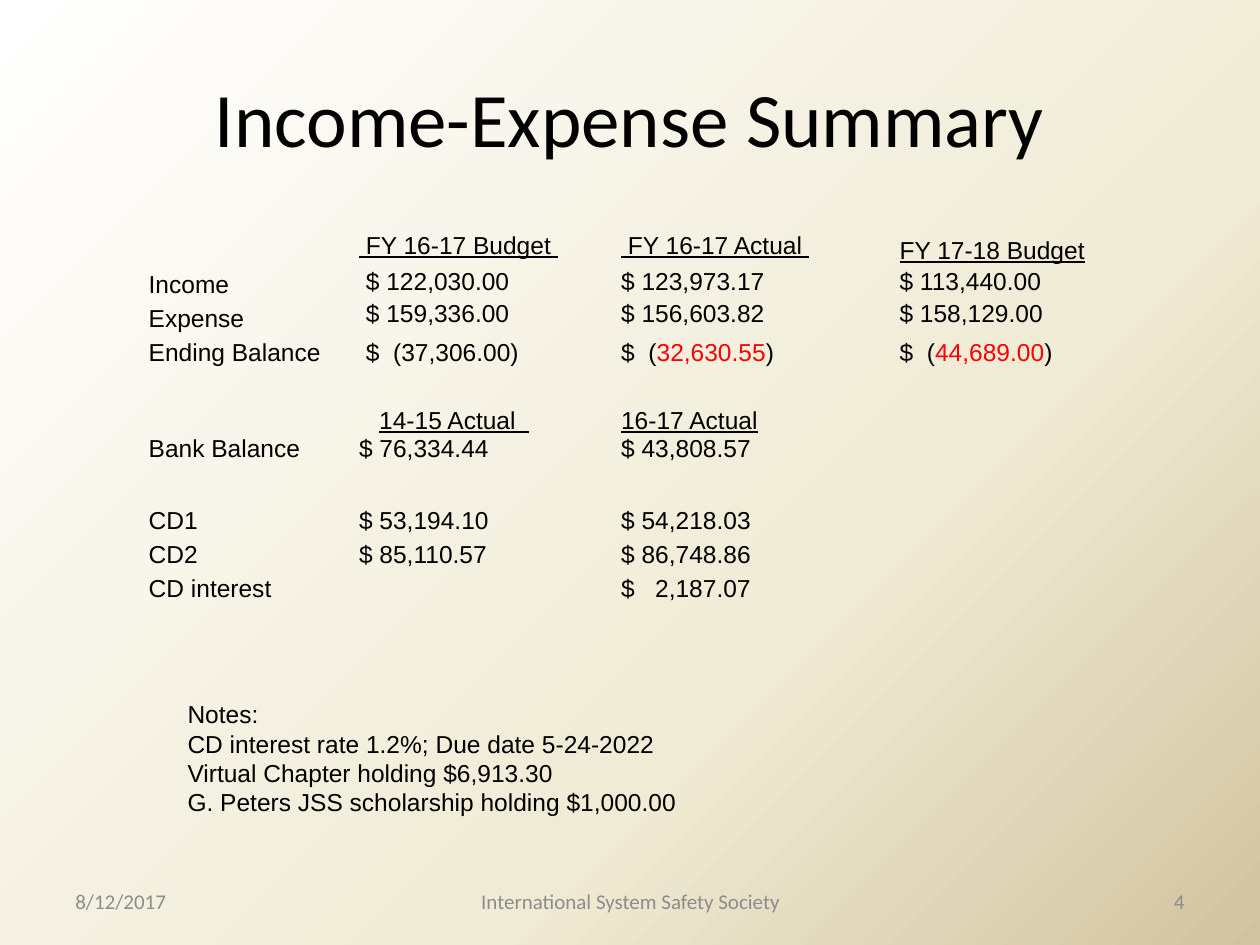
from lxml import etree
from pptx import Presentation
from pptx.dml.color import RGBColor
from pptx.enum.text import MSO_ANCHOR, PP_ALIGN
from pptx.oxml.ns import qn
from pptx.util import Inches, Pt

LEFT, CENTER, RIGHT = PP_ALIGN.LEFT, PP_ALIGN.CENTER, PP_ALIGN.RIGHT
TOP, MIDDLE, BOTTOM = MSO_ANCHOR.TOP, MSO_ANCHOR.MIDDLE, MSO_ANCHOR.BOTTOM
NO_STYLE_NO_GRID = "{2D5ABB26-0587-4C30-8999-92F81FD0307C}"
BLACK, RED, GREY = "000000", "FF0000", "8C8C8C"


def rgb(value):
    return RGBColor.from_string(value)


class Deck:
    heading_font, body_font, body_size = "Calibri", "Arial", 14

    def __init__(self, prs):
        self.s = prs.slides.add_slide(prs.slide_layouts[6])

    def background(self, stops, angle):
        fill = self.s.background.fill
        fill.gradient()
        # OOXML angles run clockwise, python-pptx angles counter-clockwise
        fill.gradient_angle = 360 - angle
        gs_list = self.s.background._cSld.find(".//" + qn("a:gsLst"))
        for gs in list(gs_list):
            gs_list.remove(gs)
        for pos, color in stops:
            gs = etree.SubElement(gs_list, qn("a:gs"), pos=str(pos * 1000))
            etree.SubElement(gs, qn("a:srgbClr"), val=color)

    def run(self, p, text, font, size, color=BLACK, underline=False):
        r = p.add_run()
        r.text = text
        r.font.name, r.font.size = font, Pt(size)
        r.font.color.rgb = rgb(color)
        r.font.underline = underline

    def text(self, box, lines, font, size, color=BLACK, align=LEFT,
             anchor=MIDDLE, wrap=True):
        sp = self.s.shapes.add_textbox(*map(Inches, box))
        tf = sp.text_frame
        tf.word_wrap, tf.vertical_anchor = wrap, anchor
        for i, line in enumerate(lines):
            p = tf.add_paragraph() if i else tf.paragraphs[0]
            p.alignment = align
            self.run(p, line, font, size, color)

    def cell(self, cell, runs, anchor, underline, indent):
        cell.fill.background()
        cell.margin_left = Inches(0.01 + indent)
        cell.margin_right = cell.margin_top = Inches(0.01)
        cell.margin_bottom = 0
        cell.vertical_anchor = anchor
        p = cell.text_frame.paragraphs[0]
        p.font.size = Pt(self.body_size)
        for text, color in runs:
            self.run(p, text, self.body_font, self.body_size, color, underline)
        if not runs:
            etree.SubElement(p._p, qn("a:endParaRPr"), sz=str(self.body_size * 100))

    def table(self, box, widths, heights, rows):
        table = self.s.shapes.add_table(
            len(rows), len(widths), *map(Inches, box)).table
        table.first_row = table.horz_banding = False
        table._tbl.tblPr.find(qn("a:tableStyleId")).text = NO_STYLE_NO_GRID
        for col, width in zip(table.columns, widths):
            col.width = Inches(width)
        for row, height in zip(table.rows, heights):
            row.height = Inches(height)
        for i, (anchors, underline, values) in enumerate(rows):
            for j, value in enumerate(values):
                runs = [(value, BLACK)] if isinstance(value, str) else value
                runs = [run for run in runs if run[0]]
                indent = INDENTS.get((i, j), 0)
                self.cell(table.cell(i, j), runs, anchors[j], underline, indent)


def deficit(amount):
    return [("$  (", BLACK), (amount, RED), (")", BLACK)]


# Anchors by column, underline, values
ALL_TOP, ALL_BOTTOM = [TOP] * 4, [BOTTOM] * 4
ROWS = [
    ([TOP, TOP, TOP, BOTTOM], True,
     ["", " FY 16-17 Budget ", " FY 16-17 Actual ", "FY 17-18 Budget"]),
    ([BOTTOM, MIDDLE, MIDDLE, MIDDLE], False,
     ["Income", " $ 122,030.00", "$ 123,973.17", "$ 113,440.00"]),
    ([BOTTOM, TOP, TOP, TOP], False,
     ["Expense", " $ 159,336.00", "$ 156,603.82", "$ 158,129.00"]),
    (ALL_BOTTOM, False,
     ["Ending Balance", " $  (37,306.00)",
      deficit("32,630.55"), deficit("44,689.00")]),
    (ALL_BOTTOM, False, ["", "", "", ""]),
    (ALL_BOTTOM, True, ["", "14-15 Actual  ", "16-17 Actual", ""]),
    (ALL_TOP, False, ["Bank Balance", "$ 76,334.44", "$ 43,808.57", ""]),
    (ALL_BOTTOM, False, ["CD1", "$ 53,194.10", "$ 54,218.03", ""]),
    (ALL_BOTTOM, False, ["CD2", "$ 85,110.57", "$ 86,748.86", ""]),
    (ALL_BOTTOM, False, ["CD interest", "", "$   2,187.07", ""]),
]
INDENTS = {(5, 1): 0.16}
ROW_HEIGHTS = [0.27] * 6 + [0.53] + [0.27] * 3

NOTES = [
    "Notes:",
    "CD interest rate 1.2%; Due date 5-24-2022",
    "Virtual Chapter holding $6,913.30",
    "G. Peters JSS scholarship holding $1,000.00",
]
FOOTERS = [
    (0.5, 2.33, "8/12/2017", LEFT),
    (3.42, 3.17, "International System Safety Society", CENTER),
    (7.17, 2.33, "4", RIGHT),
]


def main():
    prs = Presentation()
    prs.slide_width, prs.slide_height = Inches(10), Inches(7.5)
    deck = Deck(prs)
    deck.background([(0, "FFFFFF"), (65, "F0EBD5"), (100, "D1C39F")], 45)

    # Title
    deck.text((0.5, 0.3, 9, 1.25), ["Income-Expense Summary"],
              deck.heading_font, 44, align=CENTER)

    # Income, expense and balances
    deck.table((1.17, 1.83, 7.83, 2.96), [1.67, 2.08, 2.21, 1.88],
               ROW_HEIGHTS, ROWS)

    # Notes
    deck.text((1.39, 5.5, 4.1, 1.04), NOTES, deck.body_font, deck.body_size,
              anchor=TOP, wrap=False)

    # Footer
    for left, width, line, align in FOOTERS:
        deck.text((left, 6.95, width, 0.4), [line], deck.heading_font, 12,
                  GREY, align)

    prs.save("out.pptx")


if __name__ == "__main__":
    main()
